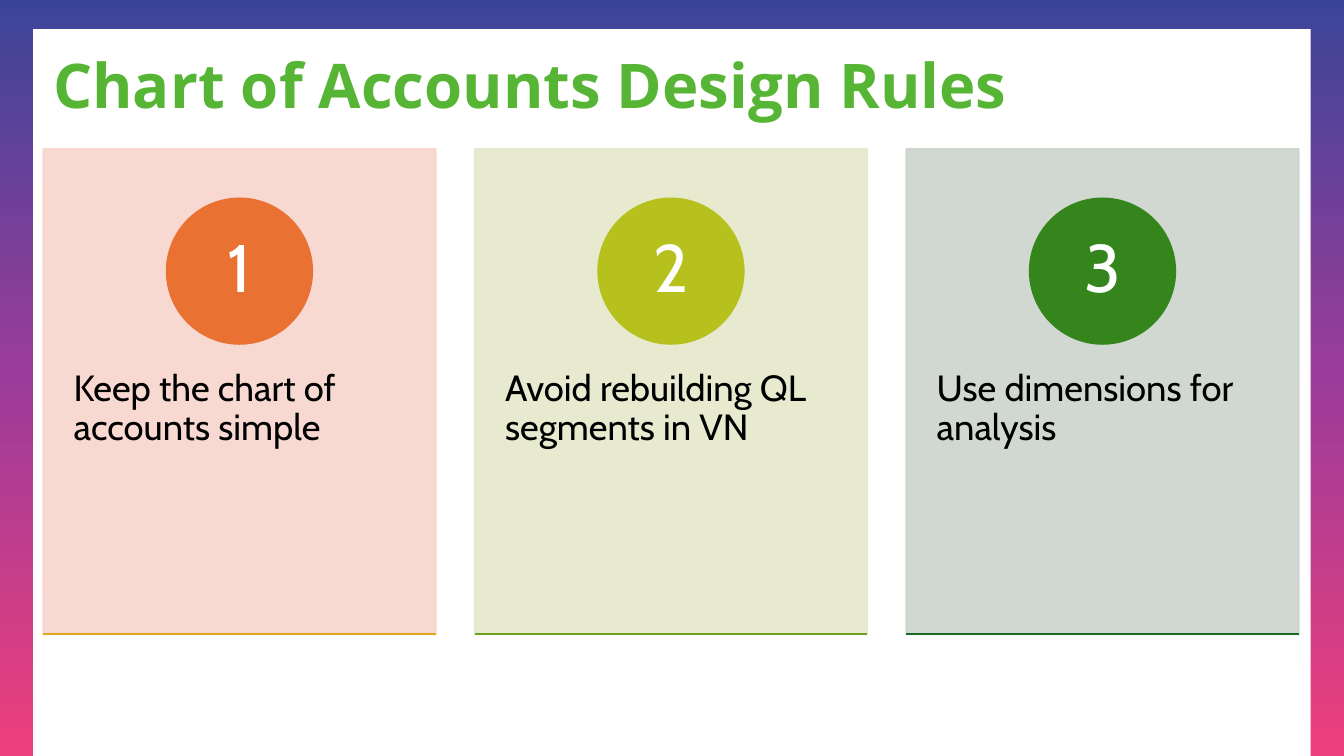
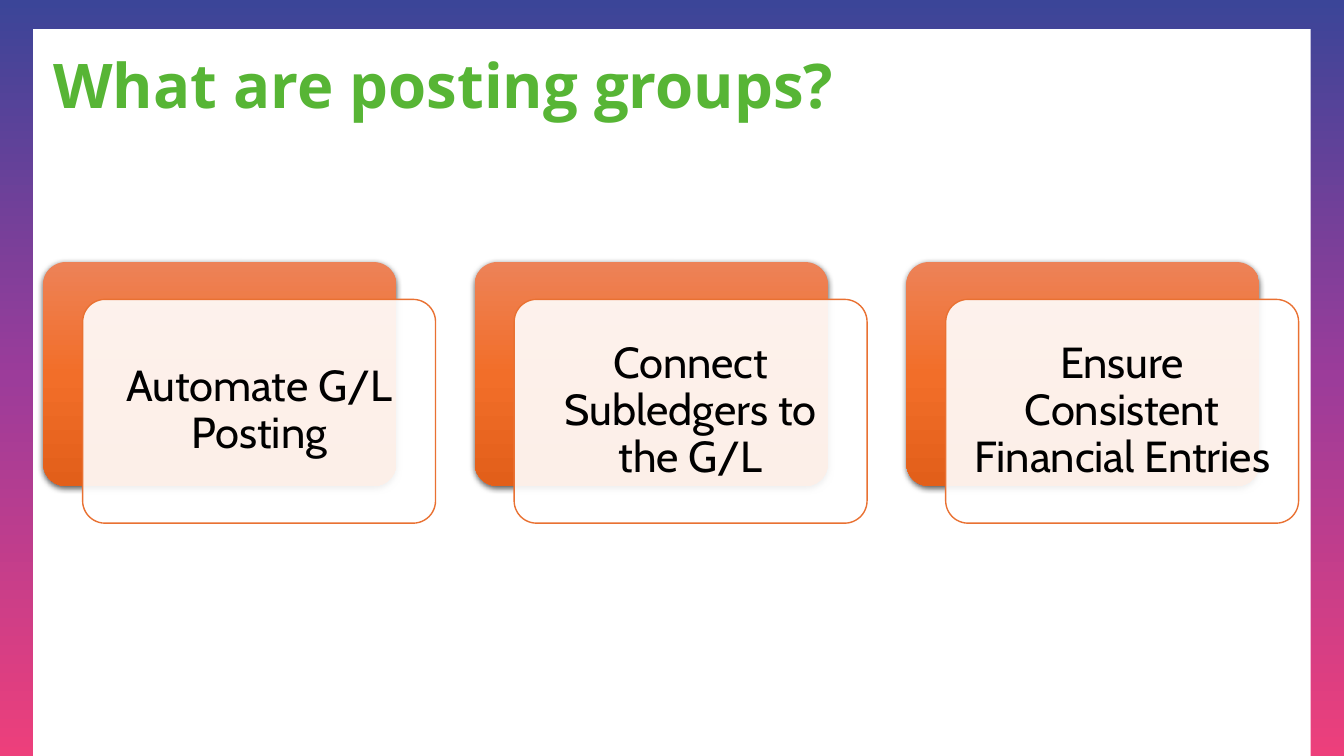
import copy

import pptx
import pptx.dml.color
import pptx.enum.shapes
import pptx.enum.text
import pptx.oxml
import pptx.oxml.ns
import pptx.util

Inches = pptx.util.Inches
Pt = pptx.util.Pt
qn = pptx.oxml.ns.qn
rgb = pptx.dml.color.RGBColor.from_string
SHAPE = pptx.enum.shapes.MSO_SHAPE
ANCHOR = pptx.enum.text.MSO_ANCHOR
ALIGN = pptx.enum.text.PP_ALIGN

WHITE, BLACK = "FFFFFF", "000000"
TITLE_GREEN, ORANGE = "57B535", "E97132"
FRAME_GRADIENT = ("3B4598", "9C3C9A", "ED3F7B")
CARD_GRADIENT = ("ED8257", "F26E29", "E25F1A")
TITLE_FONT, BODY_FONT = "Open Sans", "Cabin"

LEFT, COLUMN_STEP = 0.43, 4.28


def add_block(slide, kind, box, fills, line=None, width=1.5, opacity=100, line_opacity=100):
    """Add a shape; one fill colour is solid, three run from top to bottom."""
    block = slide.shapes.add_shape(kind, *map(Inches, box))
    block.shadow.inherit = False
    properties = block._element.spPr
    if len(fills) == 1:
        block.fill.solid()
        block.fill.fore_color.rgb = rgb(fills[0])
    else:
        block.fill.gradient()
        block.fill.gradient_angle = 270
        stop_list = properties.find(qn("a:gradFill")).find(qn("a:gsLst"))
        stop_list.insert(1, copy.deepcopy(stop_list[0]))
        for stop, position, colour in zip(block.fill.gradient_stops, (0, 0.5, 1), fills):
            stop.position = position
            stop.color.rgb = rgb(colour)
    if line:
        block.line.color.rgb = rgb(line)
        block.line.width = Pt(width)
    else:
        block.line.fill.background()
    for parent, percent in ((properties, opacity), (properties.find(qn("a:ln")), line_opacity)):
        if percent < 100:
            colour = parent.find(qn("a:solidFill")).find(qn("a:srgbClr"))
            alpha = colour.makeelement(qn("a:alpha"), {"val": str(percent * 1000)})
            colour.append(alpha)
    return block


def write(shape, text, size, colour, insets, font=BODY_FONT, bold=False,
          align=ALIGN.CENTER, anchor=ANCHOR.MIDDLE):
    """Fill a shape with one paragraph; insets are horizontal, top and bottom."""
    frame = shape.text_frame
    frame.word_wrap = True
    frame.vertical_anchor = anchor
    side, top, bottom = insets
    frame.margin_left = frame.margin_right = Inches(side)
    frame.margin_top, frame.margin_bottom = Inches(top), Inches(bottom)
    frame.text = text
    paragraph = frame.paragraphs[0]
    paragraph.alignment = align
    paragraph.line_spacing = 0.9
    paragraph.font.name = font
    paragraph.font.size = Pt(size)
    paragraph.font.bold = bold
    paragraph.font.color.rgb = rgb(colour)


deck = pptx.Presentation()
deck.slide_width, deck.slide_height = Inches(13.33), Inches(7.5)

# Frame and title shared by both slides
slides = []
for heading in ("Chart of Accounts Design Rules", "What are posting groups?"):
    slide = deck.slides.add_slide(deck.slide_layouts[6])
    add_block(slide, SHAPE.RECTANGLE, (0, 0, 13.33, 7.5), FRAME_GRADIENT)
    add_block(slide, SHAPE.RECTANGLE, (0.33, 0.29, 12.67, 7.21), (WHITE,))
    title = slide.shapes.add_textbox(Inches(LEFT), Inches(0.4), Inches(12.45), Inches(0.96))
    write(title, heading, 44, TITLE_GREEN, (0.1, 0.05, 0.05), TITLE_FONT, True, ALIGN.LEFT)
    slides.append(slide)
rules_slide, groups_slide = slides

# Numbered design rules: text, panel, badge and baseline colours
design_rules = (
    ("Keep the chart of accounts simple", "F7D5CE", "E97132", "E0A61D"),
    ("Avoid rebuilding QL segments in VN", "E5E8CA", "B7C11E", "6BA31D"),
    ("Use dimensions for analysis", "CCD4CD", "34861C", "196B24"),
)
panel_top, panel_width, panel_height, badge_size = 1.48, 3.89, 4.81, 1.44
for index, (rule, panel_colour, badge_colour, baseline_colour) in enumerate(design_rules):
    left = LEFT + index * COLUMN_STEP
    panel = add_block(rules_slide, SHAPE.RECTANGLE, (left, panel_top, panel_width, panel_height),
                      (panel_colour,), panel_colour, opacity=90, line_opacity=90)
    write(panel, rule, 26, BLACK, (0.3, 2.19, 0.36), align=ALIGN.LEFT, anchor=ANCHOR.TOP)

    badge_left = left + (panel_width - badge_size) / 2
    badge = add_block(rules_slide, SHAPE.OVAL, (badge_left, 1.97, badge_size, badge_size),
                      (badge_colour,), badge_colour)
    write(badge, str(index + 1), 48, WHITE, (0.11, 0.01, 0.01))

    baseline_y = Inches(panel_top + panel_height)
    baseline = rules_slide.shapes.add_connector(
        pptx.enum.shapes.MSO_CONNECTOR.STRAIGHT,
        Inches(left), baseline_y, Inches(left + panel_width), baseline_y)
    baseline.line.color.rgb = rgb(baseline_colour)
    baseline.line.width = Pt(1.5)
    baseline_properties = baseline._element.spPr
    baseline_properties.append(baseline_properties.makeelement(qn("a:effectLst"), {}))

# Purposes of posting groups, each a card over an offset backing
purposes = ("Automate G/L Posting", "Connect Subledgers to the G/L",
            "Ensure Consistent Financial Entries")
card_top, card_width, card_height = 2.6, 3.5, 2.22
offset_x, offset_y = 0.39, 0.37
shadow_xml = (
    f'<a:outerShdw {pptx.oxml.ns.nsdecls("a")} blurRad="{Pt(4.5)}" dist="{Pt(1.5)}"'
    ' dir="5400000" algn="ctr" rotWithShape="0">'
    f'<a:srgbClr val="{BLACK}"><a:alpha val="63000"/></a:srgbClr></a:outerShdw>'
)
for index, purpose in enumerate(purposes):
    left = LEFT + index * COLUMN_STEP
    backing = add_block(groups_slide, SHAPE.ROUNDED_RECTANGLE,
                        (left, card_top, card_width, card_height), CARD_GRADIENT)
    backing._element.spPr.find(qn("a:effectLst")).append(pptx.oxml.parse_xml(shadow_xml))
    card = add_block(groups_slide, SHAPE.ROUNDED_RECTANGLE,
                     (left + offset_x, card_top + offset_y, card_width, card_height),
                     (WHITE,), ORANGE, width=1, opacity=90)
    backing.adjustments[0] = card.adjustments[0] = 0.1
    # The rounded corners already inset the text by about 0.06 inches
    write(card, purpose, 31, BLACK, (0.13, 0.13, 0.13))

deck.save("out.pptx")
